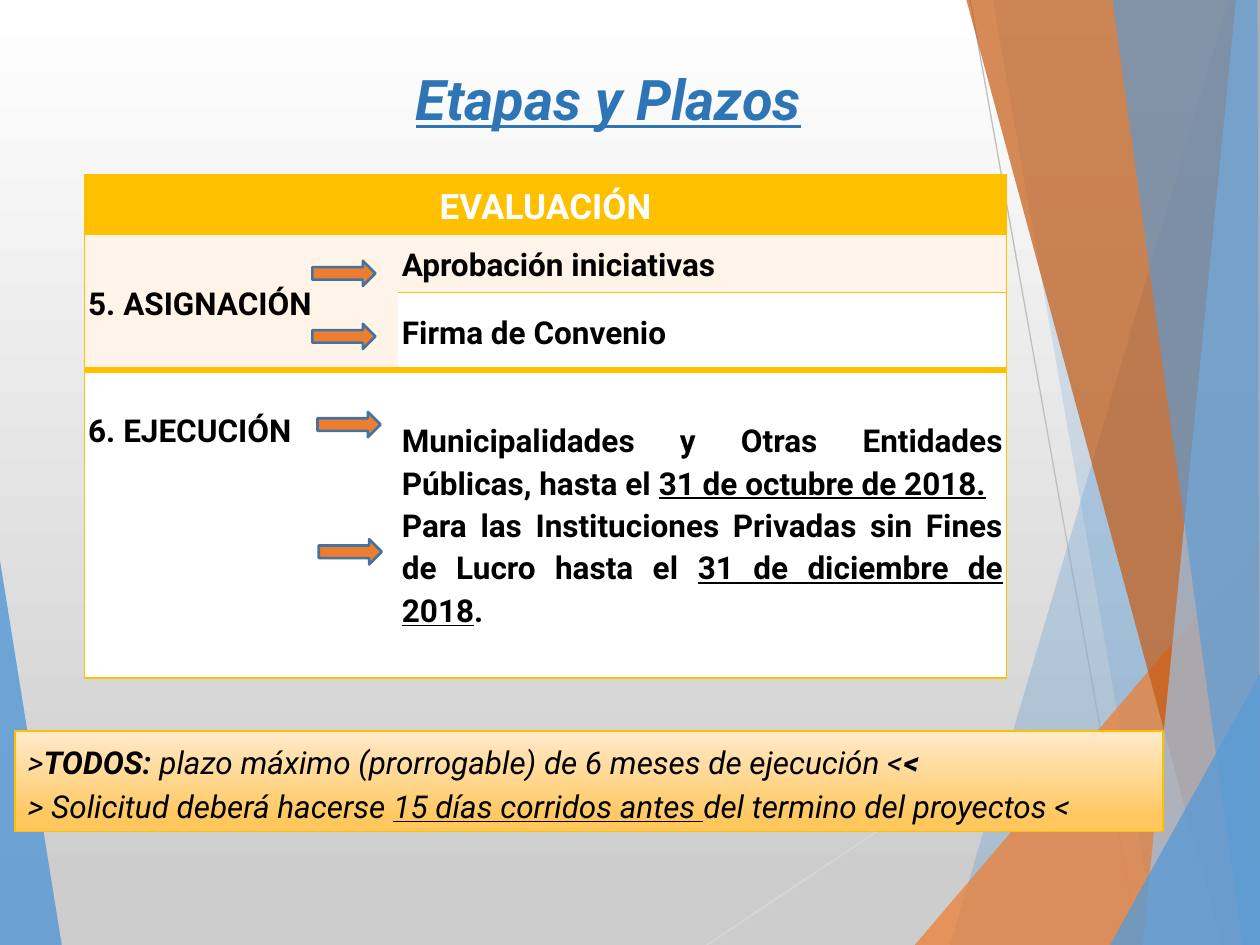
import pptx
import pptx.dml.color
import pptx.enum.shapes
import pptx.enum.text
import pptx.oxml.ns
import pptx.util
from lxml import etree

Inches, Pt = pptx.util.Inches, pptx.util.Pt
ALIGN = pptx.enum.text.PP_ALIGN
ANCHOR = pptx.enum.text.MSO_ANCHOR
SHAPE = pptx.enum.shapes.MSO_SHAPE
qn = pptx.oxml.ns.qn

WIDTH, HEIGHT = 10, 7.5
FONT = "Roboto"
COLORS = {
    "white": "FFFFFF", "black": "000000", "backdrop": "CDCDCD",
    "blue": "5B9BD5", "light_blue": "9DC3E6", "title": "2E75B6",
    "orange": "ED7D31", "rust": "C55A11", "outline": "43739E",
    "gold": "FFC000", "cream": "FFF4E7", "note_top": "FFEACB",
    "note_bottom": "FFC75E", "grey": "BFBFBF", "pale_grey": "D9D9D9",
}

# Corners, colour and opacity of each band, from back to front
BANDS = [
    ([(0, 4.45), (0.49, HEIGHT), (0, HEIGHT)], "blue", 85),
    ([(9.75, 0), (7.54, HEIGHT), (WIDTH, HEIGHT), (WIDTH, 0)], "blue", 30),
    ([(7.88, 0), (9.19, HEIGHT), (WIDTH, HEIGHT), (WIDTH, 0)], "blue", 20),
    ([(7.26, HEIGHT), (WIDTH, 4.29), (WIDTH, HEIGHT)], "orange", 72),
    ([(7.67, 0), (9.7, HEIGHT), (WIDTH, HEIGHT), (WIDTH, 0)], "rust", 70),
    ([(9.81, 0), (9.07, HEIGHT), (WIDTH, HEIGHT), (WIDTH, 0)], "light_blue", 70),
    ([(8.83, 0), (9.86, HEIGHT), (WIDTH, HEIGHT), (9.98, 0)], "blue", 65),
    ([(8.81, HEIGHT), (WIDTH, 5.35), (WIDTH, HEIGHT)], "blue", 80),
]
RAYS = [((5.61, HEIGHT), (WIDTH, 4.57), "pale_grey"),
        ((7.7, 0), (9.04, HEIGHT), "grey")]

COLUMNS = [2.49, 4.83]
ROWS = [0.47, 0.46, 0.62, 2.44]
RULES = [1, 1, 1, 4, 1]  # line widths above each row and below the last
# Each paragraph is a list of (text, style); b, i, u = bold, italic, underlined
STAGES = {
    (0, 0): [[("EVALUACIÓN", "b")]],
    (1, 0): [[("5. ASIGNACIÓN", "b")]],
    (1, 1): [[("Aprobación iniciativas", "b")]],
    (2, 1): [[("Firma de Convenio", "b")]],
    (3, 0): [[("6. EJECUCIÓN", "b")]],
    (3, 1): [
        [("Municipalidades y Otras Entidades Públicas, hasta el ", "b"),
         ("31 de octubre de 2018.", "bu")],
        [("Para las Instituciones Privadas sin Fines de Lucro hasta el ", "b"),
         ("31 de diciembre de 2018", "bu"), (".", "b")],
    ],
}
NOTE = [
    [(">", "i"), ("TODOS: ", "bi"),
     ("plazo máximo (prorrogable) de 6 meses de ejecución <", "i"), ("<", "bi")],
    [("> Solicitud deberá hacerse ", "i"), ("15 días corridos antes ", "iu"),
     ("del termino del proyectos <", "i")],
]
ARROWS = [(2.48, 2.07), (2.48, 2.57), (2.52, 3.27), (2.53, 4.28)]


def rgb(color):
    return pptx.dml.color.RGBColor.from_string(COLORS[color])


def fill_solid(fill, color):
    fill.solid()
    fill.fore_color.rgb = rgb(color)


def fill_downward(fill, top, bottom, end):
    """Fade from top to bottom colour, reaching the latter at share end."""
    fill.gradient()
    fill.gradient_angle = 270
    for stop, color, position in zip(fill.gradient_stops, (top, bottom), (0, end)):
        stop.color.rgb = rgb(color)
        stop.position = position


def write(frame, paragraphs, size, color, align, spacing=1.15):
    for index, runs in enumerate(paragraphs):
        paragraph = frame.add_paragraph() if index else frame.paragraphs[0]
        paragraph.alignment = align
        paragraph.line_spacing = spacing
        paragraph.space_before = Pt(0)
        for text, style in runs:
            run = paragraph.add_run()
            run.text = text
            font = run.font
            font.name, font.size, font.color.rgb = FONT, Pt(size), rgb(color)
            font.bold, font.italic, font.underline = (s in style for s in "biu")


def add_band(shapes, corners, color, opacity):
    points = [(Inches(x), Inches(y)) for x, y in corners]
    builder = shapes.build_freeform(*points[0])
    builder.add_line_segments(points[1:], close=True)
    band = builder.convert_to_shape()
    band.shadow.inherit = False
    band.line.fill.background()
    fill_solid(band.fill, color)
    tint = band.element.spPr.find(qn("a:solidFill"))[0]
    etree.SubElement(tint, qn("a:alpha"), val=str(opacity * 1000))


def add_ray(shapes, start, end, color):
    ray = shapes.add_connector(pptx.enum.shapes.MSO_CONNECTOR.STRAIGHT,
                               *map(Inches, start + end))
    ray.line.color.rgb = rgb(color)
    ray.line.width = Pt(0.75)
    etree.SubElement(ray.element.spPr, qn("a:effectLst"))


def add_title(slide):
    title = slide.shapes.title
    title.element.getparent().append(title.element)  # in front of the bands
    title.left, title.top, title.width, title.height = map(
        Inches, (0.93, 0.52, 7.8, 0.59))
    frame = title.text_frame
    frame.auto_size = pptx.enum.text.MSO_AUTO_SIZE.NONE
    frame.vertical_anchor = ANCHOR.MIDDLE
    write(frame, [[("Etapas y Plazos", "biu")]], 32, "title", ALIGN.CENTER, 0.9)


def set_borders(cell, widths):
    """Set left, right, top and bottom rules; a width of 0 means none."""
    properties = cell._tc.get_or_add_tcPr()
    for side, width in zip("LRTB", widths):
        rule = etree.SubElement(properties, qn("a:ln" + side), w=str(Pt(width)))
        if width:
            paint = etree.SubElement(rule, qn("a:solidFill"))
            etree.SubElement(paint, qn("a:srgbClr"), val=COLORS["gold"])
        else:
            etree.SubElement(rule, qn("a:noFill"))


def add_stages(shapes):
    table = shapes.add_table(
        len(ROWS), len(COLUMNS), Inches(0.67), Inches(1.39),
        Inches(sum(COLUMNS)), Inches(sum(ROWS))).table
    table.first_row = table.horz_banding = False
    for column, width in zip(table.columns, COLUMNS):
        column.width = Inches(width)
    for row, height in zip(table.rows, ROWS):
        row.height = Inches(height)
    table.cell(0, 0).merge(table.cell(0, 1))
    table.cell(1, 0).merge(table.cell(2, 0))

    fills = {(0, 0): "gold", (0, 1): "gold", (1, 0): "cream",
             (1, 1): "cream", (2, 0): "cream"}
    for r in range(len(ROWS)):
        for c in range(len(COLUMNS)):
            cell = table.cell(r, c)
            top = 0 if (r, c) == (2, 0) else RULES[r]
            bottom = 0 if (r, c) == (1, 0) else RULES[r + 1]
            set_borders(cell, (1 - c, c, top, bottom))
            fill_solid(cell.fill, fills.get((r, c), "white"))
            cell.margin_left = cell.margin_right = Inches(0.03)
            cell.margin_top = cell.margin_bottom = 0
            cell.vertical_anchor = ANCHOR.MIDDLE
            if (r, c) in STAGES:
                heading = r == 0
                align = (ALIGN.CENTER if heading
                         else ALIGN.JUSTIFY if c else ALIGN.LEFT)
                write(cell.text_frame, STAGES[r, c], 20 if heading else 18,
                      "white" if heading else "black", align)
    execution = table.cell(3, 0)
    execution.vertical_anchor = ANCHOR.TOP
    execution.margin_top = Inches(0.3)


def add_outlined(shapes, preset, box, line, width):
    shape = shapes.add_shape(preset, *map(Inches, box))
    shape.shadow.inherit = False
    shape.line.color.rgb = rgb(line)
    shape.line.width = Pt(width)
    return shape


def add_note(shapes):
    note = add_outlined(shapes, SHAPE.RECTANGLE, (0.12, 5.8, 9.11, 0.8), "gold", 1)
    fill_downward(note.fill, "note_top", "note_bottom", 0.88)
    note.text_frame.word_wrap = True
    write(note.text_frame, NOTE, 18, "black", ALIGN.JUSTIFY)


def main():
    deck = pptx.Presentation()
    deck.slide_width, deck.slide_height = Inches(WIDTH), Inches(HEIGHT)
    slide = deck.slides.add_slide(deck.slide_layouts[5])
    shapes = slide.shapes
    fill_downward(slide.background.fill, "white", "backdrop", 0.94)
    for ray in RAYS:
        add_ray(shapes, *ray)
    for band in BANDS:
        add_band(shapes, *band)
    add_title(slide)
    add_stages(shapes)
    add_note(shapes)
    for left, top in ARROWS:
        arrow = add_outlined(shapes, SHAPE.RIGHT_ARROW, (left, top, 0.5, 0.2),
                             "outline", 1.5)
        fill_solid(arrow.fill, "orange")
    deck.save("out.pptx")


if __name__ == "__main__":
    main()
